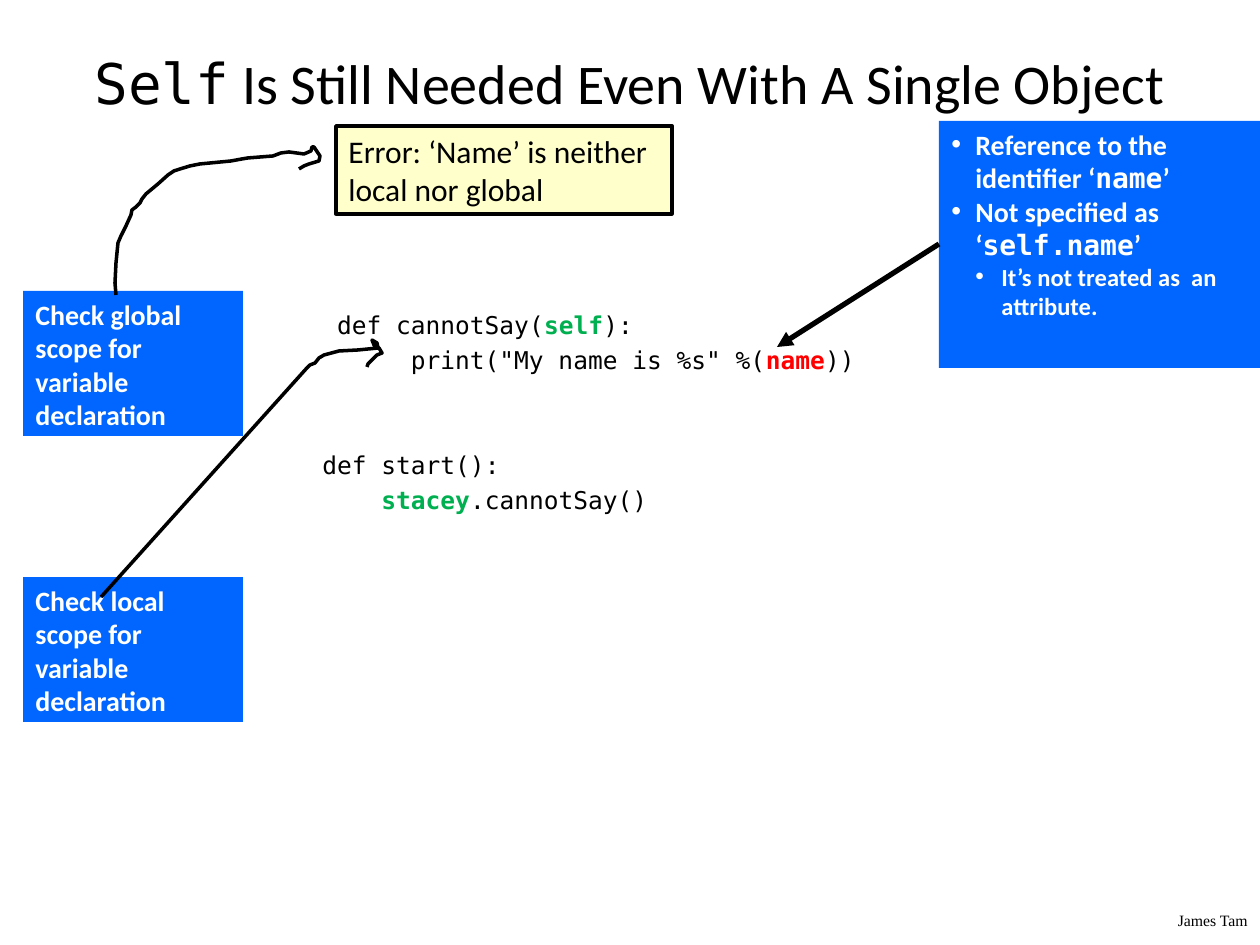
from dataclasses import dataclass

from lxml.etree import SubElement
from pptx import Presentation
from pptx.dml.color import RGBColor
from pptx.enum.shapes import MSO_CONNECTOR, MSO_SHAPE
from pptx.enum.text import MSO_ANCHOR, PP_ALIGN
from pptx.oxml.ns import qn
from pptx.util import Pt

EMU_PER_PX = 914400 / 126


def px(n):
    return round(n * EMU_PER_PX)


@dataclass(frozen=True)
class Theme:
    black: str = "000000"
    white: str = "FFFFFF"
    blue: str = "0066FF"
    cream: str = "FFFFCC"
    green: str = "00B050"
    red: str = "FF0000"
    sans: str = "Calibri"
    mono: str = "DejaVu Sans Mono"
    serif: str = "Times New Roman"
    title: int = 32
    error: int = 18
    note: int = 16
    code: int = 14
    footer: int = 9


class Deck:
    def __init__(self, theme):
        self.t = theme
        self.prs = Presentation()
        self.prs.slide_width, self.prs.slide_height = px(1260), px(945)
        self.s = self.prs.slides.add_slide(self.prs.slide_layouts[5])

    def run(self, p, text, size, font, color, bold=False):
        r = p.add_run()
        r.text = text
        r.font.size, r.font.name, r.font.bold = Pt(size), font, bold
        r.font.color.rgb = RGBColor.from_string(color)

    def paragraph(self, tf, first, align=PP_ALIGN.LEFT, margin=0, indent=0, bullet=False):
        p = tf.paragraphs[0] if first else tf.add_paragraph()
        p.alignment = align
        pPr = p._p.get_or_add_pPr()
        pPr.set("marL", str(px(margin)))
        pPr.set("indent", str(px(indent)))
        if bullet:
            SubElement(pPr, qn("a:buFont"), typeface="Arial")
            SubElement(pPr, qn("a:buChar"), char="•")
        return p

    def place(self, sp, box):
        sp.left, sp.top, sp.width, sp.height = map(px, box)

    def title(self, box, runs):
        sp = self.s.shapes.title
        self.place(sp, box)
        tf = sp.text_frame
        tf.word_wrap, tf.vertical_anchor = True, MSO_ANCHOR.MIDDLE
        p = self.paragraph(tf, True, PP_ALIGN.CENTER)
        for text, font in runs:
            self.run(p, text, self.t.title, font, self.t.black)

    def text(self, box):
        tf = self.s.shapes.add_textbox(*map(px, box)).text_frame
        tf.word_wrap = True
        return tf

    def rect(self, box, fill, line=None, anchor=MSO_ANCHOR.TOP):
        sp = self.s.shapes.add_shape(MSO_SHAPE.RECTANGLE, *map(px, box))
        sp.shadow.inherit = False
        sp.fill.solid()
        sp.fill.fore_color.rgb = RGBColor.from_string(fill)
        if line:
            self.stroke(sp, 2)
        else:
            sp.line.fill.background()
        tf = sp.text_frame
        tf.word_wrap, tf.vertical_anchor = True, anchor
        return tf

    def stroke(self, sp, width):
        sp.line.color.rgb = RGBColor.from_string(self.t.black)
        sp.line.width = Pt(width)

    def arrow(self, start, end):
        c = self.s.shapes.add_connector(MSO_CONNECTOR.STRAIGHT, *map(px, start + end))
        self.stroke(c, 3)
        SubElement(c.line._get_or_add_ln(), qn("a:tailEnd"), type="triangle")
        SubElement(c._element.spPr, qn("a:effectLst"))

    def sketch(self, points):
        fb = self.s.shapes.build_freeform(*points[0], scale=EMU_PER_PX)
        fb.add_line_segments(points[1:], close=False)
        sp = fb.convert_to_shape()
        sp.shadow.inherit = False
        sp.fill.background()
        self.stroke(sp, 2)

    def code(self, box, lines):
        """Each line is (columns of indent, points above, runs)."""
        column = 14.75
        tf = self.text(box)
        for i, (columns, above, runs) in enumerate(lines):
            p = self.paragraph(tf, i == 0, margin=columns * column)
            p.space_before = Pt(above)
            for text, accent in runs:
                self.run(p, text, self.t.code, self.t.mono, accent or self.t.black, bool(accent))

    def bullets(self, box, items):
        """Each item is (level, size, runs)."""
        tf = self.rect(box, self.t.blue)
        for i, (level, size, runs) in enumerate(items):
            margin, indent = ((24, -24), (50, -26))[level]
            p = self.paragraph(tf, i == 0, margin=margin, indent=indent, bullet=True)
            p.level = level
            for text, font in runs:
                self.run(p, text, size, font, self.t.white, True)


def main():
    t = Theme()
    d = Deck(t)

    # Title and footer
    d.title((63, 38, 1134, 88),
            [("Self", t.mono), (" Is Still Needed Even With A Single Object", t.sans)])
    p = d.paragraph(d.text((1092, 905, 168, 32)), True, PP_ALIGN.RIGHT)
    d.run(p, "James Tam", t.footer, t.serif, t.black)

    # Code
    d.code((310, 304, 887, 220), [
        (1, 0, [("def cannotSay(", None), ("self", t.green), ("):", None)]),
        (6, 3.3, [('print("My name is %s" %(', None), ("name", t.red), ("))", None)]),
        (0, 43, [("def start():", None)]),
        (4, 3.3, [("stacey", t.green), (".cannotSay()", None)]),
    ])

    # Explanation of the reference, with its arrow
    d.bullets((939, 121, 321, 247), [
        (0, t.note, [("Reference to the identifier ‘", t.sans), ("name", t.mono), ("’", t.sans)]),
        (0, t.note, [("Not specified as ‘", t.sans), ("self.name", t.mono), ("’", t.sans)]),
        (1, t.code, [("It’s not treated as  an attribute.", t.sans)]),
    ])
    d.arrow((939, 244), (777, 347))

    # Scope checks
    for scope, top in (("local", 577), ("global", 291)):
        p = d.paragraph(d.rect((23, top, 220, 145), t.blue), True)
        d.run(p, f"Check {scope} scope for variable declaration", t.note, t.sans, t.white, True)

    # Hand-drawn arrows: local scope to the code, global scope to the error
    d.sketch([(101, 597), (306, 369), (310, 365), (315, 363), (319, 358), (324, 355),
              (339, 351), (358, 350), (378, 348), (377, 343), (372, 340), (374, 345),
              (379, 348), (382, 353), (377, 355), (372, 360), (368, 364), (367, 367)])
    d.sketch([(116, 295), (115, 283), (116, 263), (118, 243), (121, 236), (126, 226),
              (131, 215), (132, 210), (136, 207), (140, 203), (142, 199), (146, 194),
              (158, 184), (168, 175), (174, 171), (180, 169), (190, 166), (200, 164),
              (231, 161), (242, 159), (248, 158), (273, 156), (281, 153), (289, 152),
              (304, 154), (311, 151), (312, 147), (314, 147), (320, 156), (319, 161),
              (309, 164), (304, 166), (299, 169)])

    # Error message
    p = d.paragraph(d.rect((336, 126, 336, 88), t.cream, t.black, MSO_ANCHOR.MIDDLE), True)
    d.run(p, "Error: ‘Name’ is neither local nor global", t.error, t.sans, t.black)

    d.prs.save("out.pptx")


if __name__ == "__main__":
    main()
